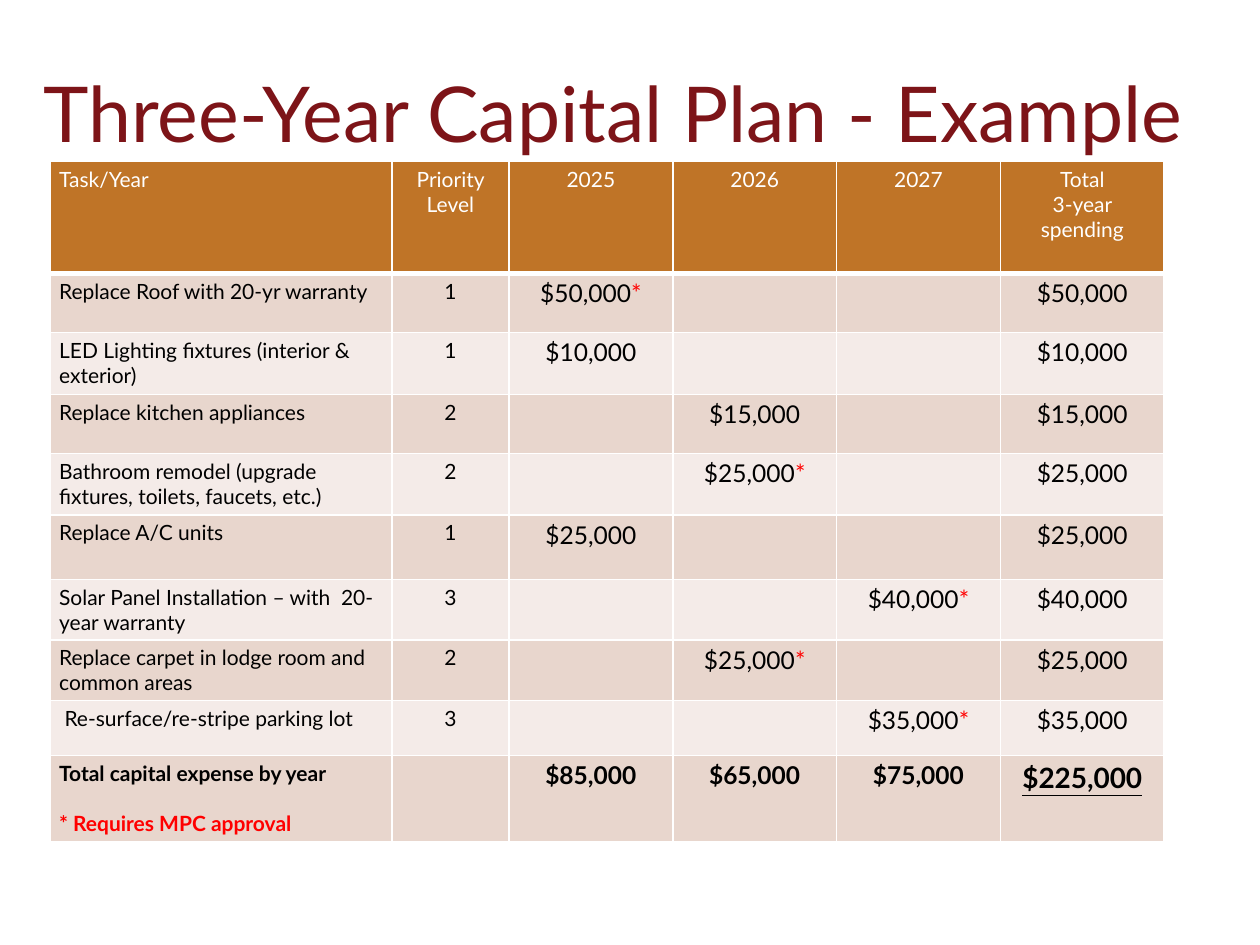
import pptx
import pptx.dml.color
import pptx.enum.text
import pptx.oxml
import pptx.oxml.ns
import pptx.util
from pptx.util import Inches

RGBColor = pptx.dml.color.RGBColor
MAROON = RGBColor(0x7D, 0x14, 0x18)
ORANGE = RGBColor(0xBF, 0x74, 0x27)
DARK_BAND = RGBColor(0xE8, 0xD6, 0xCD)
LIGHT_BAND = RGBColor(0xF4, 0xEB, 0xE8)
WHITE = RGBColor(0xFF, 0xFF, 0xFF)
BLACK = RGBColor(0, 0, 0)
RED = RGBColor(0xFF, 0, 0)

FONT = "Lato"
CENTER = pptx.enum.text.PP_ALIGN.CENTER
LEFT = pptx.enum.text.PP_ALIGN.LEFT

YEARS = [2025, 2026, 2027]
HEADINGS = ["Task/Year", "Priority Level", *map(str, YEARS)]
# task, priority, year, cost, requires approval
TASKS = [
    ("Replace Roof with 20-yr warranty", 1, 2025, 50000, True),
    ("LED Lighting fixtures (interior & exterior)", 1, 2025, 10000, False),
    ("Replace kitchen appliances", 2, 2026, 15000, False),
    ("Bathroom remodel (upgrade fixtures, toilets, faucets, etc.)", 2, 2026, 25000, True),
    ("Replace A/C units", 1, 2025, 25000, False),
    ("Solar Panel Installation – with  20-year warranty", 3, 2027, 40000, True),
    ("Replace carpet in lodge room and common areas", 2, 2026, 25000, True),
    (" Re-surface/re-stripe parking lot", 3, 2027, 35000, True),
]
COLUMN_WIDTHS = [2.71, 0.93] + [1.3] * 4
ROW_HEIGHTS = [0.89, 0.47, 0.49, 0.47, 0.49, 0.51, 0.47, 0.47, 0.44, 0.67]


def add_run(paragraph, text, size, color, bold=False, underline=None):
    run = paragraph.add_run()
    run.text = text
    font = run.font
    font.name = FONT
    font.size = pptx.util.Pt(size)
    font.color.rgb = color
    font.bold = bold
    font.underline = underline


def write(cell, text, size=12, color=BLACK, align=CENTER, **style):
    """Write the first paragraph of a cell and return it."""
    paragraph = cell.text_frame.paragraphs[0]
    paragraph.alignment = align
    add_run(paragraph, text, size, color, **style)
    return paragraph


def dollars(amount):
    return f"${amount:,}"


def set_borders(cell, bottom):
    properties = cell._tc.get_or_add_tcPr()
    for side, points in (("L", 1), ("R", 1), ("T", 1), ("B", bottom)):
        properties.append(pptx.oxml.parse_xml(
            f'<a:ln{side} {pptx.oxml.ns.nsdecls("a")} w="{pptx.util.Pt(points)}">'
            f'<a:solidFill><a:srgbClr val="{WHITE}"/></a:solidFill></a:ln{side}>'))


def format_cells(table):
    for index, row in enumerate(table.rows):
        is_header = index == 0
        band = DARK_BAND if index % 2 else LIGHT_BAND
        for cell in row.cells:
            cell.margin_left = cell.margin_right = Inches(0.07)
            cell.margin_top = cell.margin_bottom = Inches(0.04)
            set_borders(cell, bottom=3 if is_header else 1)
            cell.fill.solid()
            cell.fill.fore_color.rgb = ORANGE if is_header else band


def fill_header(cells):
    for column, heading in enumerate(HEADINGS):
        write(cells[column], heading, color=WHITE, align=CENTER if column else LEFT)
    write(cells[5], "Total", color=WHITE)
    second_line = cells[5].text_frame.add_paragraph()
    second_line.alignment = CENTER
    add_run(second_line, "3-year spending", 12, WHITE)


def fill_task(cells, task, priority, year, cost, requires_approval):
    write(cells[0], task, align=LEFT)
    write(cells[1], str(priority))
    year_cost = write(cells[2 + YEARS.index(year)], dollars(cost), size=14)
    if requires_approval:
        add_run(year_cost, "*", 14, RED)
    write(cells[5], dollars(cost), size=14)


def fill_totals(cells):
    write(cells[0], "Total capital expense by year", align=LEFT, bold=True)
    approval_note = cells[0].text_frame.add_paragraph()
    approval_note.space_before = pptx.util.Pt(14.4)
    add_run(approval_note, "* Requires MPC approval", 12, RED, bold=True)
    for column, year in enumerate(YEARS, start=2):
        year_total = sum(task[3] for task in TASKS if task[2] == year)
        write(cells[column], dollars(year_total), size=14, bold=True)
    grand_total = sum(task[3] for task in TASKS)
    write(cells[5], dollars(grand_total), size=16, bold=True, underline=True)


def add_title(slide):
    title = slide.shapes.add_textbox(Inches(0), Inches(0.11), Inches(9.74), Inches(1.56))
    frame = title.text_frame
    frame.word_wrap = True
    frame.vertical_anchor = pptx.enum.text.MSO_ANCHOR.MIDDLE
    frame.paragraphs[0].alignment = CENTER
    add_run(frame.paragraphs[0], "Three-Year Capital Plan - Example", 44, MAROON)


def add_plan(slide):
    table = slide.shapes.add_table(
        len(ROW_HEIGHTS), len(COLUMN_WIDTHS), Inches(0.4), Inches(1.28),
        Inches(sum(COLUMN_WIDTHS)), Inches(sum(ROW_HEIGHTS))).table
    for column, width in zip(table.columns, COLUMN_WIDTHS):
        column.width = Inches(width)
    for row, height in zip(table.rows, ROW_HEIGHTS):
        row.height = Inches(height)
    format_cells(table)

    header, *task_rows, totals = [list(row.cells) for row in table.rows]
    fill_header(header)
    for cells, task in zip(task_rows, TASKS):
        fill_task(cells, *task)
    fill_totals(totals)


def main():
    deck = pptx.Presentation()
    deck.slide_width, deck.slide_height = Inches(10), Inches(7.5)
    slide = deck.slides.add_slide(deck.slide_layouts[6])
    add_title(slide)
    add_plan(slide)
    deck.save("out.pptx")


if __name__ == "__main__":
    main()
